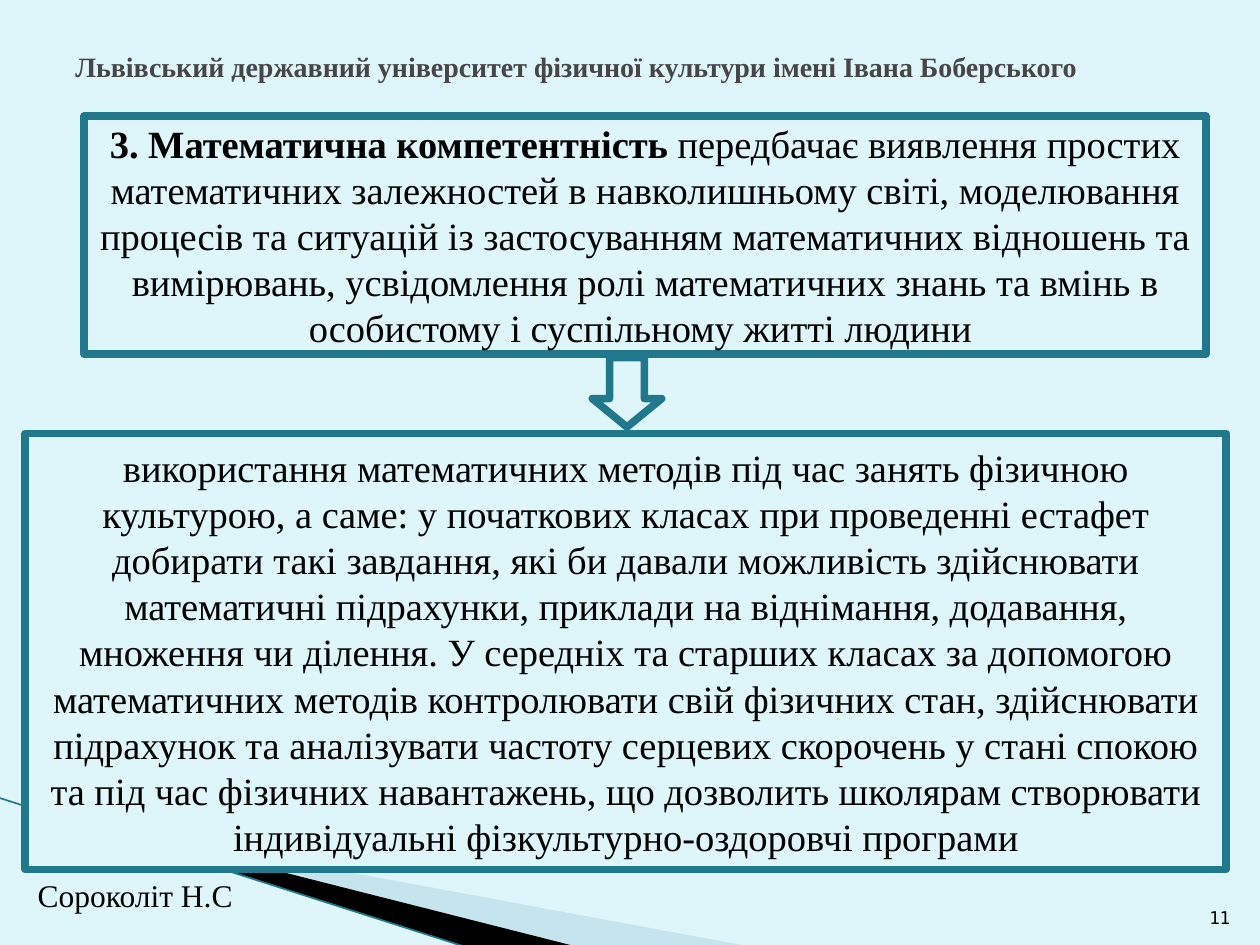
from dataclasses import dataclass

from lxml.etree import SubElement
from pptx import Presentation
from pptx.dml.color import RGBColor
from pptx.enum.shapes import MSO_CONNECTOR, MSO_SHAPE
from pptx.enum.text import MSO_ANCHOR, PP_ALIGN
from pptx.oxml.ns import qn
from pptx.shapes.autoshape import Shape
from pptx.slide import Slide
from pptx.util import Cm, Pt

COLORS = {
    "background": "DEF5FA",
    "frame": "21788D",
    "wing": "A0CBDC",
    "black": "000000",
    "title": "464646",
}
SERIF = "Times New Roman"


@dataclass(frozen=True)
class Area:
    left: float
    top: float
    width: float
    height: float

    def lengths(self) -> tuple[Cm, Cm, Cm, Cm]:
        return Cm(self.left), Cm(self.top), Cm(self.width), Cm(self.height)


@dataclass(frozen=True)
class Label:
    area: Area
    text: str
    size: float
    font: str = SERIF
    color: str = "black"
    bold: bool = False
    align: PP_ALIGN = PP_ALIGN.LEFT
    anchor: MSO_ANCHOR = MSO_ANCHOR.TOP


@dataclass(frozen=True)
class Panel:
    area: Area
    text: str
    heading: str = ""


@dataclass(frozen=True)
class Wing:
    points: tuple[tuple[float, float], ...]
    color: str
    opacity: int = 100


WINGS = (
    Wing(((1.4, 16.54), (15.11, 19.08), (11.58, 19.08), (1.4, 16.51)), "wing", 40),
    Wing(((1.35, 16.48), (11.61, 19.08), (9.45, 19.1), (1.37, 16.51)), "black"),
)
LABELS = (
    Label(
        Area(1.27, 0.76, 22.86, 1.17),
        "Львівський державний університет фізичної культури імені Івана Боберського",
        16, color="title", bold=True, anchor=MSO_ANCHOR.MIDDLE,
    ),
    Label(Area(0.51, 17.53, 4.5, 1.02), "Сороколіт Н.С", 18),
    Label(
        Area(24.03, 17.81, 1.02, 1.02), "11", 10, font="DejaVu Sans Mono",
        align=PP_ALIGN.RIGHT, anchor=MSO_ANCHOR.BOTTOM,
    ),
)
PANELS = (
    Panel(
        Area(1.7, 2.34, 22.61, 4.8),
        "передбачає виявлення простих математичних залежностей в навколишньому "
        "світі, моделювання процесів та ситуацій із застосуванням математичних "
        "відношень та вимірювань, усвідомлення ролі математичних знань та вмінь "
        "в особистому і суспільному житті людини ",
        "3. Математична компетентність ",
    ),
    Panel(
        Area(0.51, 8.74, 24.21, 8.79),
        "використання математичних методів під час занять фізичною культурою, "
        "а саме: у початкових класах при проведенні естафет добирати такі завдання, "
        "які би давали можливість здійснювати математичні підрахунки, приклади на "
        "віднімання, додавання, множення чи ділення. У середніх та старших класах "
        "за допомогою математичних методів контролювати свій фізичних стан, "
        "здійснювати підрахунок та аналізувати частоту серцевих скорочень у стані "
        "спокою та під час фізичних навантажень, що дозволить школярам створювати "
        "індивідуальні фізкультурно-оздоровчі програми",
    ),
)
ARROW = Area(11.94, 7.21, 1.4, 1.4)


def color_of(name: str) -> RGBColor:
    return RGBColor.from_string(COLORS[name])


def fill_shape(shape: Shape, color: str) -> None:
    shape.shadow.inherit = False
    shape.fill.solid()
    shape.fill.fore_color.rgb = color_of(color)


def draw_wing(page: Slide, wing: Wing) -> None:
    start, *others = [(Cm(x), Cm(y)) for x, y in wing.points]
    builder = page.shapes.build_freeform(*start)
    builder.add_line_segments(others, close=True)
    shape = builder.convert_to_shape()
    fill_shape(shape, wing.color)
    shape.line.fill.background()
    if wing.opacity < 100:
        color = shape.fill._xPr.find(qn("a:solidFill"))[0]
        SubElement(color, qn("a:alpha"), val=str(wing.opacity * 1000))


def draw_edge(page: Slide) -> None:
    edge = page.shapes.add_connector(
        MSO_CONNECTOR.STRAIGHT, Cm(-0.03), Cm(16.08), Cm(9.42), Cm(19.1)
    )
    edge.line.color.rgb = color_of("frame")
    edge.line.width = Pt(0.95)
    SubElement(edge._element.spPr, qn("a:effectLst"))


def draw_label(page: Slide, label: Label) -> None:
    box = page.shapes.add_textbox(*label.area.lengths())
    frame = box.text_frame
    frame.word_wrap = True
    frame.vertical_anchor = label.anchor
    para = frame.paragraphs[0]
    para.text = label.text
    para.alignment = label.align
    para.font.name = label.font
    para.font.size = Pt(label.size)
    para.font.bold = label.bold
    para.font.color.rgb = color_of(label.color)


def draw_framed(page: Slide, kind: MSO_SHAPE, area: Area) -> Shape:
    shape = page.shapes.add_shape(kind, *area.lengths())
    fill_shape(shape, "background")
    shape.line.color.rgb = color_of("frame")
    shape.line.width = Pt(4.33)
    SubElement(shape.line._get_or_add_ln(), qn("a:round"))
    return shape


def draw_panel(page: Slide, panel: Panel) -> None:
    frame = draw_framed(page, MSO_SHAPE.RECTANGLE, panel.area).text_frame
    frame.word_wrap = True
    frame.vertical_anchor = MSO_ANCHOR.MIDDLE
    para = frame.paragraphs[0]
    para.alignment = PP_ALIGN.CENTER
    para.font.name = SERIF
    para.font.size = Pt(22)
    para.font.color.rgb = color_of("black")
    if panel.heading:
        span = para.add_run()
        span.text = panel.heading
        span.font.bold = True
    para.add_run().text = panel.text


def main() -> None:
    deck = Presentation()
    deck.slide_width, deck.slide_height = Cm(25.4), Cm(19.05)
    page = deck.slides.add_slide(deck.slide_layouts[6])
    page.background.fill.solid()
    page.background.fill.fore_color.rgb = color_of("background")
    for wing in WINGS:
        draw_wing(page, wing)
    draw_edge(page)
    for label in LABELS:
        draw_label(page, label)
    for panel in PANELS:
        draw_panel(page, panel)
    arrow = draw_framed(page, MSO_SHAPE.DOWN_ARROW, ARROW)
    arrow.adjustments[0] = 0.5
    arrow.adjustments[1] = 0.41
    deck.save("out.pptx")


if __name__ == "__main__":
    main()
